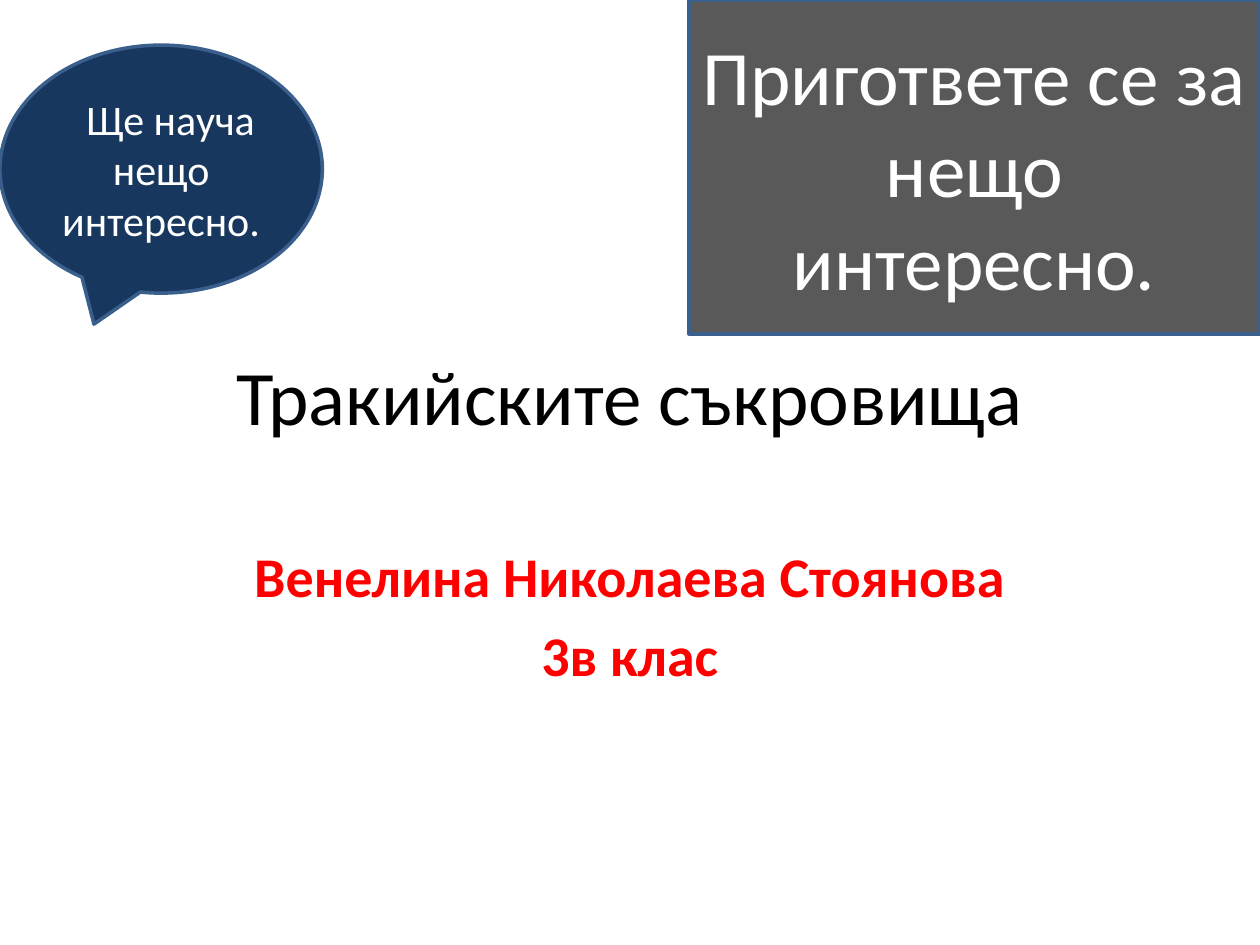
"""Build the title slide about the Thracian treasures."""
from pptx import Presentation
from pptx import util as u
from pptx.dml.color import RGBColor
from pptx.enum import shapes, text

FONT = "Calibri"
OUTLINE = "3A5F8C"
TITLE = ["Тракийските съкровища"]
AUTHOR = ["Венелина Николаева Стоянова", "3в клас"]
THOUGHT = ["Ще науча нещо интересно."]
NOTICE = ["Пригответе се за нещо интересно."]


def color(value):
    return RGBColor.from_string(value)


def write(box, lines, size, ink, bold=False, before=0, indent=0, anchor="MIDDLE"):
    frame = box.text_frame
    frame.word_wrap = True
    frame.vertical_anchor = text.MSO_ANCHOR[anchor]
    for index, line in enumerate(lines):
        para = frame.add_paragraph() if index else frame.paragraphs[0]
        para.alignment = text.PP_ALIGN.CENTER
        para.space_before = u.Pt(before)
        if indent:
            para._p.get_or_add_pPr().set("indent", str(u.Cm(indent)))
        span = para.add_run()
        span.text = line
        span.font.name = FONT
        span.font.size = u.Pt(size)
        span.font.bold = bold
        span.font.color.rgb = color(ink)


def add_text(page, place, lines, **style):
    write(page.shapes.add_textbox(*map(u.Cm, place)), lines, **style)


def add_panel(page, kind, place, fill, lines, **style):
    panel = page.shapes.add_shape(kind, *map(u.Cm, place))
    panel.shadow.inherit = False
    panel.fill.solid()
    panel.fill.fore_color.rgb = color(fill)
    panel.line.color.rgb = color(OUTLINE)
    panel.line.width = u.Pt(2)
    write(panel, lines, ink="FFFFFF", **style)


def main():
    deck = Presentation()
    deck.slide_width, deck.slide_height = u.Cm(25.4), u.Cm(19.05)
    page = deck.slides.add_slide(deck.slide_layouts[6])
    kinds = shapes.MSO_SHAPE
    add_text(page, (1.9, 5.92, 21.6, 4.08), TITLE, size=44, ink="000000")
    add_text(page, (3.81, 10.8, 17.78, 4.87), AUTHOR, size=32, ink="FF0000",
             bold=True, before=6.4, anchor="TOP")
    add_panel(page, kinds.OVAL_CALLOUT, (0, 0.91, 6.5, 5), "17375E", THOUGHT,
              size=24, indent=0.38)
    add_panel(page, kinds.FLOWCHART_PROCESS, (13.89, 0, 11.51, 6.73), "595959",
              NOTICE, size=44)
    deck.save("out.pptx")


if __name__ == "__main__":
    main()
